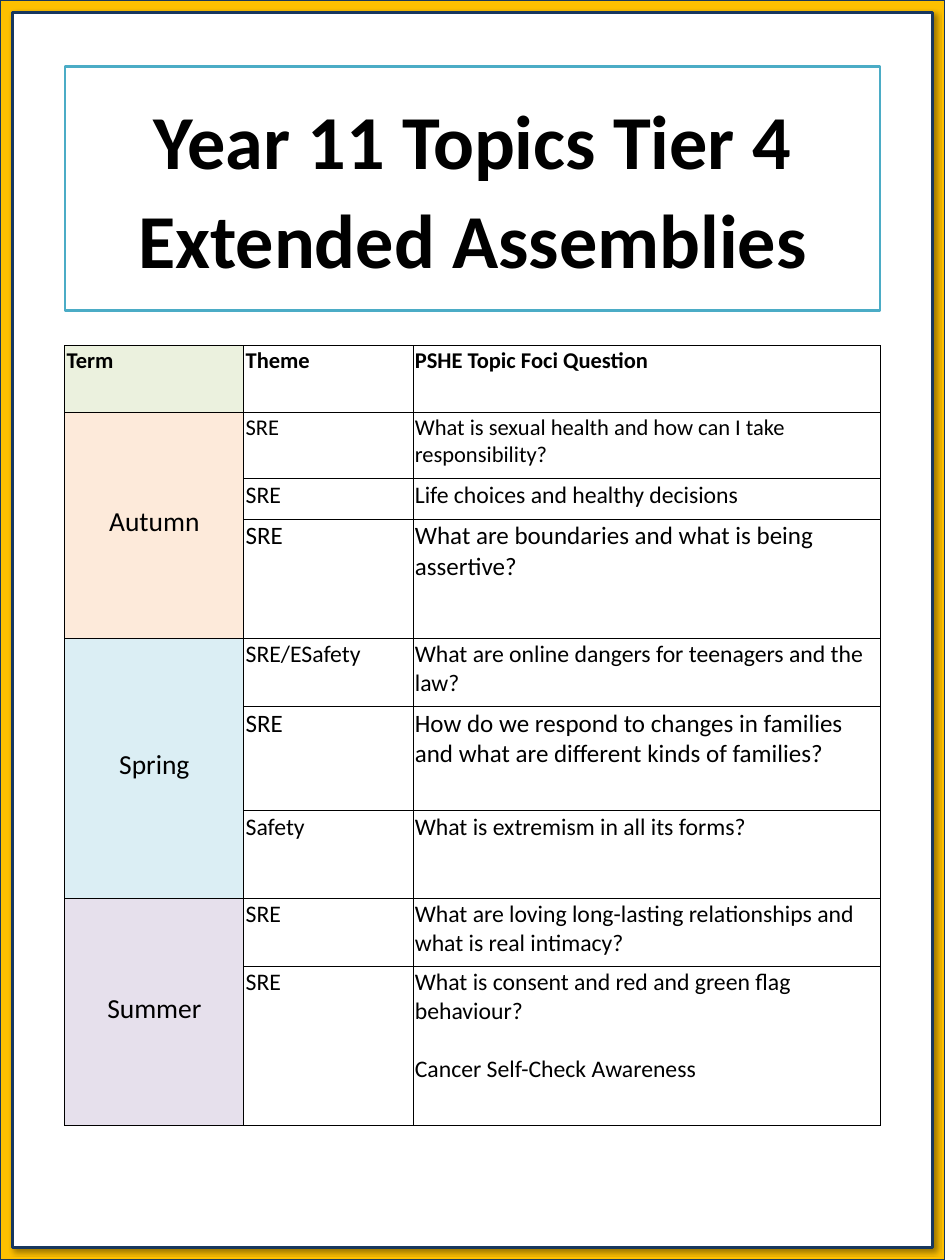
import lxml.etree
import pptx
import pptx.dml.color
import pptx.enum.shapes
import pptx.enum.text
import pptx.oxml.ns
import pptx.util

RGBColor = pptx.dml.color.RGBColor
BLACK = RGBColor(0x00, 0x00, 0x00)
WHITE = RGBColor(0xFF, 0xFF, 0xFF)
GOLD = RGBColor(0xFD, 0xC0, 0x00)
NAVY = RGBColor(0x17, 0x37, 0x5E)
AQUA = RGBColor(0x4B, 0xAC, 0xC6)
GREEN = RGBColor(0xEB, 0xF1, 0xDE)
PEACH = RGBColor(0xFD, 0xEA, 0xDA)
SKY = RGBColor(0xDB, 0xEE, 0xF4)
LILAC = RGBColor(0xE6, 0xE0, 0xEC)

FONT = "Calibri"
WIDTH, HEIGHT = 10.5, 14
MARGIN = 0.72
COLUMNS = (1.99, 1.88, 5.19)
ROWS = (0.74, 0.74, 0.45, 1.32, 0.76, 1.16, 0.97, 0.76, 1.77)
TITLE = ("Year 11 Topics Tier 4", "Extended Assemblies")
HEADINGS = ("Term", "Theme", "PSHE Topic Foci Question")
TERMS = (
    ("Autumn", PEACH, (
        ("SRE", 18, ("What is sexual health and how can I take responsibility?",)),
        ("SRE", 19, ("Life choices and healthy decisions",)),
        ("SRE", 20, ("What are boundaries and what is being assertive?",)),
    )),
    ("Spring", SKY, (
        ("SRE/ESafety", 19, ("What are online dangers for teenagers and the law?",)),
        ("SRE", 20, ("How do we respond to changes in families and what are "
                     "different kinds of families?",)),
        ("Safety", 19, ("What is extremism in all its forms?",)),
    )),
    ("Summer", LILAC, (
        ("SRE", 19, ("What are loving long-lasting relationships and what is real intimacy?",)),
        ("SRE", 19, ("What is consent and red and green flag behaviour?",
                     "Cancer Self-Check Awareness")),
    )),
)


def add_panel(page, box, fill, line, weight):
    """Draw a filled, outlined rectangle in the box."""
    panel = page.shapes.add_shape(
        pptx.enum.shapes.MSO_SHAPE.RECTANGLE, *map(pptx.util.Inches, box))
    panel.shadow.inherit = False
    panel.fill.solid()
    panel.fill.fore_color.rgb = fill
    panel.line.color.rgb = line
    panel.line.width = pptx.util.Pt(weight)
    return panel


def write_lines(frame, lines, size, bold=False, centred=False, before=0, after=0):
    """Write each line as a paragraph of the text frame."""
    for index, words in enumerate(lines):
        para = frame.add_paragraph() if index else frame.paragraphs[0]
        align = pptx.enum.text.PP_ALIGN
        para.alignment = align.CENTER if centred else align.LEFT
        para.space_before = pptx.util.Pt(before if index else 0)
        para.space_after = pptx.util.Pt(after)
        span = para.add_run()
        span.text = words
        span.font.name = FONT
        span.font.size = pptx.util.Pt(size)
        span.font.bold = bold
        span.font.color.rgb = BLACK


def add_frame(page, box):
    """Draw the gold border and the shadowed white sheet inside it."""
    left, top, width, height = box
    add_panel(page, box, GOLD, NAVY, 2.25)
    inset = 0.14
    sheet = add_panel(page, (left + inset, top + inset, width - 2 * inset,
                             height - 2 * inset), WHITE, NAVY, 2.25)
    effects = sheet._element.spPr.find(pptx.oxml.ns.qn("a:effectLst"))
    shadow = lxml.etree.SubElement(
        effects, pptx.oxml.ns.qn("a:outerShdw"), blurRad=str(pptx.util.Pt(4)),
        dist=str(pptx.util.Pt(3)), dir="2700000", algn="tl", rotWithShape="0")
    colour = lxml.etree.SubElement(shadow, pptx.oxml.ns.qn("a:srgbClr"), val=str(BLACK))
    lxml.etree.SubElement(colour, pptx.oxml.ns.qn("a:alpha"), val="40000")


def add_title(page, box):
    """Place the outlined title panel."""
    frame = add_panel(page, box, WHITE, AQUA, 2).text_frame
    frame.word_wrap = True
    frame.vertical_anchor = pptx.enum.text.MSO_ANCHOR.MIDDLE
    write_lines(frame, TITLE, 61, bold=True, centred=True, after=6)


def style_cell(cell, fill=None):
    """Give a cell its margins, black borders and fill."""
    cell.margin_left = cell.margin_right = cell.margin_top = pptx.util.Inches(0.02)
    cell.margin_bottom = pptx.util.Inches(0.08)
    properties = cell._tc.get_or_add_tcPr()
    for side in ("lnL", "lnR", "lnT", "lnB"):
        border = lxml.etree.SubElement(
            properties, pptx.oxml.ns.qn("a:" + side), w=str(pptx.util.Pt(1)))
        solid = lxml.etree.SubElement(border, pptx.oxml.ns.qn("a:solidFill"))
        lxml.etree.SubElement(solid, pptx.oxml.ns.qn("a:srgbClr"), val=str(BLACK))
    if fill is None:
        cell.fill.background()
    else:
        cell.fill.solid()
        cell.fill.fore_color.rgb = fill


def add_topics(page, box):
    """Place the table of terms, themes and questions."""
    table = page.shapes.add_table(
        len(ROWS), len(COLUMNS), *map(pptx.util.Inches, box)).table
    table.first_row = table.horz_banding = False
    for column, width in zip(table.columns, COLUMNS):
        column.width = pptx.util.Inches(width)
    for row, height in zip(table.rows, ROWS):
        row.height = pptx.util.Inches(height)
    for index, heading in enumerate(HEADINGS):
        cell = table.cell(0, index)
        style_cell(cell, None if index else GREEN)
        write_lines(cell.text_frame, (heading,), 18, bold=True)
    first = 1
    for term, fill, topics in TERMS:
        for row, (theme, size, questions) in enumerate(topics, first):
            style_cell(table.cell(row, 0), fill)
            for column, lines in ((1, (theme,)), (2, questions)):
                cell = table.cell(row, column)
                style_cell(cell)
                write_lines(cell.text_frame, lines, size, before=23)
        label = table.cell(first, 0)
        label.merge(table.cell(first + len(topics) - 1, 0))
        label.vertical_anchor = pptx.enum.text.MSO_ANCHOR.MIDDLE
        write_lines(label.text_frame, (term,), 22, centred=True)
        first += len(topics)


def main():
    """Build the slide and save it."""
    deck = pptx.Presentation()
    deck.slide_width = pptx.util.Inches(WIDTH)
    deck.slide_height = pptx.util.Inches(HEIGHT)
    page = deck.slides.add_slide(deck.slide_layouts[6])
    add_frame(page, (0, 0, WIDTH, HEIGHT))
    add_title(page, (MARGIN, 0.74, sum(COLUMNS), 2.71))
    add_topics(page, (MARGIN, 3.84, sum(COLUMNS), sum(ROWS)))
    deck.save("out.pptx")


if __name__ == "__main__":
    main()
